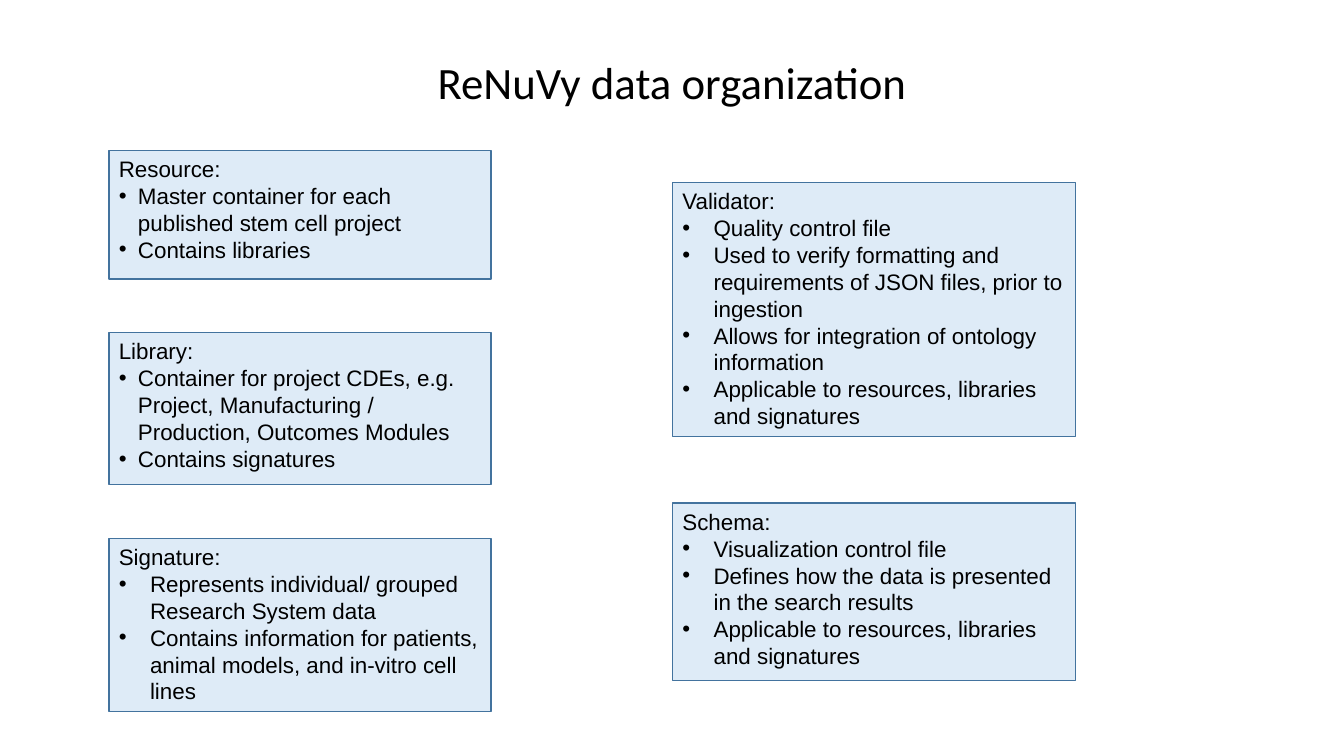
from pptx import Presentation, util as u
from pptx.dml.color import RGBColor
from pptx.enum import shapes, text
from lxml import etree

WIDE, HIGH = 13.33, 7.5
LEFT, RIGHT = (1.08, 3.79), (6.67, 4)  # column start and width


def paint(color, code):
    color.rgb = RGBColor.from_string(code)


def bullet(par, dent):
    props = par._p.get_or_add_pPr()
    props.set("marL", str(u.Inches(dent)))
    props.set("indent", str(-u.Inches(dent)))
    space = props.nsmap["a"]
    etree.SubElement(props, f"{{{space}}}buFont", typeface="Arial")
    etree.SubElement(props, f"{{{space}}}buChar", char="•")


deck = Presentation()
deck.slide_width, deck.slide_height = u.Inches(WIDE), u.Inches(HIGH)
slide = deck.slides.add_slide(deck.slide_layouts[5])

# Title
title = slide.shapes.title
title.left, title.top = u.Inches((WIDE - 5.4) / 2), u.Inches(0.49)
title.width, title.height = u.Inches(5.4), u.Inches(0.64)
frame = title.text_frame
frame.text = "ReNuVy data organization"
frame.word_wrap = False
frame.auto_size = text.MSO_AUTO_SIZE.NONE
frame.vertical_anchor = text.MSO_ANCHOR.MIDDLE
head = frame.paragraphs[0]
head.alignment = text.PP_ALIGN.CENTER
head.font.name, head.font.size = "Calibri", u.Pt(32)
paint(head.font.color, "000000")

# Boxes: column, top, height, bullet indent, heading, points
boxes = [
    (LEFT, 1.49, 1.28, 0.19, "Resource:", [
        "Master container for each published stem cell project",
        "Contains libraries"]),
    (LEFT, 3.3, 1.51, 0.19, "Library:", [
        "Container for project CDEs, e.g. Project, Manufacturing / "
        "Production, Outcomes Modules",
        "Contains signatures"]),
    (LEFT, 5.34, 1.72, 0.31, "Signature:", [
        "Represents individual/ grouped Research System data",
        "Contains information for patients, animal models, and in-vitro "
        "cell lines"]),
    (RIGHT, 1.81, 2.52, 0.31, "Validator:", [
        "Quality control file",
        "Used to verify formatting and requirements of JSON files, prior to "
        "ingestion",
        "Allows for integration of ontology information",
        "Applicable to resources, libraries and signatures"]),
    (RIGHT, 4.99, 1.76, 0.31, "Schema:", [
        "Visualization control file",
        "Defines how the data is presented in the search results",
        "Applicable to resources, libraries and signatures"]),
]

for (left, width), top, height, dent, name, points in boxes:
    box = slide.shapes.add_shape(
        shapes.MSO_SHAPE.RECTANGLE,
        *(u.Inches(n) for n in (left, top, width, height)))
    box.shadow.inherit = False
    box.fill.solid()
    paint(box.fill.fore_color, "DEEBF7")
    paint(box.line.color, "43739E")
    box.line.width = u.Pt(1)

    # Heading and bulleted points
    frame = box.text_frame
    frame.word_wrap = True
    frame.vertical_anchor = text.MSO_ANCHOR.TOP
    frame.text = "\n".join([name, *points])
    for row, par in enumerate(frame.paragraphs):
        par.alignment = text.PP_ALIGN.LEFT
        par.font.name, par.font.size = "Arial", u.Pt(16)
        paint(par.font.color, "000000")
        if row:
            bullet(par, dent)

deck.save("out.pptx")
